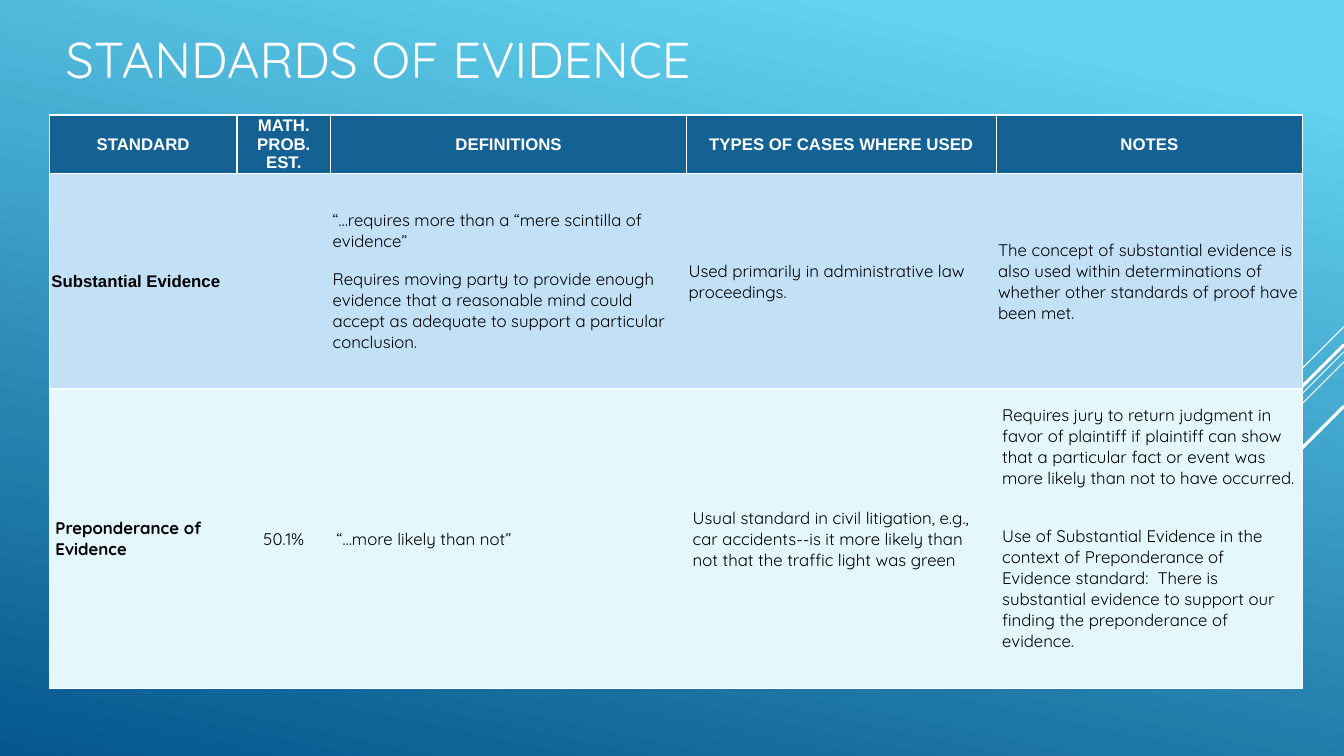
from dataclasses import dataclass

from lxml import etree
from pptx import Presentation
from pptx.dml.color import RGBColor
from pptx.enum.shapes import MSO_CONNECTOR
from pptx.enum.text import MSO_ANCHOR, MSO_AUTO_SIZE, PP_ALIGN
from pptx.oxml.ns import qn
from pptx.util import Inches, Pt

LEFT, CENTER = PP_ALIGN.LEFT, PP_ALIGN.CENTER
MIDDLE = MSO_ANCHOR.MIDDLE
STRAIGHT = MSO_CONNECTOR.STRAIGHT
NO_FIT = MSO_AUTO_SIZE.NONE
NO_STYLE = "{2D5ABB26-0587-4C30-8999-92F81FD0307C}"


@dataclass
class Theme:
    sans: str = "Arial"
    round: str = "Quicksand"
    white: str = "FFFFFF"
    black: str = "000000"
    sky: str = "62D2EF"
    deep: str = "05578D"
    head: str = "146194"
    bands: tuple = ("C2E1F6", "E3F7FC")
    big: int = 36
    body: int = 12
    rule: int = 1


THEME = Theme()
WIDTH, HEIGHT = 13.33, 7.5
TITLE = "STANDARDS OF EVIDENCE"
TITLE_BOX = (0.55, -0.22, 11, 1.59)
TABLE_LEFT, TABLE_TOP = 0.49, 1.14
COLS = (1.86, 0.93, 3.53, 3.07, 3.04)
ROWS = (0.58, 2.14, 2.97)
PADS = (0.06, 0.02, 0.06)
GAPS = (0, 12, 27)
TAIL = 0.21
RAYS = ((3.24, 1, 0.75), (3.49, 3.26, 0.75), (3.59, 2.07, 0.75),
        (3.42, 1.91, 2.25), (4.03, 1.39, 2.25))

HEADS = ("STANDARD", "MATH. PROB. EST.", "DEFINITIONS",
         "TYPES OF CASES WHERE USED", "NOTES")
SUBSTANTIAL = (
    "Substantial Evidence",
    "",
    ("“…requires more than a “mere scintilla of evidence”",
     "Requires moving party to provide enough evidence that a reasonable mind "
     "could accept as adequate to support a particular conclusion."),
    "Used primarily in administrative law proceedings.",
    "The concept of substantial evidence is also used within determinations "
    "of whether other standards of proof have been met.",
)
PREPONDERANCE = (
    "Preponderance of Evidence",
    "50.1%",
    "“…more likely than not”",
    "Usual standard in civil litigation, e.g., car accidents--is it more "
    "likely than not that the traffic light was green",
    ("Requires jury to return judgment in favor of plaintiff if plaintiff can "
     "show that a particular fact or event was more likely than not to have "
     "occurred.",
     "Use of Substantial Evidence in the context of Preponderance of Evidence "
     "standard:  There is substantial evidence to support our finding the "
     "preponderance of evidence."),
)
GRID = (HEADS, SUBSTANTIAL, PREPONDERANCE)


def rgb(code):
    return RGBColor.from_string(code)


def write(frame, text, font=THEME.round, size=THEME.body, color=THEME.black,
          bold=False, align=LEFT, gap=0):
    parts = (text,) if isinstance(text, str) else text
    for i, part in enumerate(parts):
        para = frame.add_paragraph() if i else frame.paragraphs[0]
        para.alignment = align
        para.space_before = Pt(gap if i else 0)
        run = para.add_run()
        run.text = part
        run.font.name = font
        run.font.size = Pt(size)
        run.font.bold = bold
        run.font.color.rgb = rgb(color)


def border(cell, sides):
    props = cell._tc.get_or_add_tcPr()
    for side in "LRTB":
        line = etree.SubElement(props, qn(f"a:ln{side}"))
        if side in sides:
            line.set("w", str(Pt(THEME.rule)))
            fill = etree.SubElement(line, qn("a:solidFill"))
            etree.SubElement(fill, qn("a:srgbClr")).set("val", THEME.white)
        else:
            etree.SubElement(line, qn("a:noFill"))


def paint(slide):
    fill = slide.background.fill
    fill.gradient()
    fill.gradient_angle = 360 - 102
    for stop, color, place in zip(fill.gradient_stops,
                                  (THEME.sky, THEME.deep), (0.1, 1)):
        stop.color.rgb = rgb(color)
        stop.position = place


def draw_rays(slide):
    for top, run, width in RAYS:
        ray = slide.shapes.add_connector(
            STRAIGHT, Inches(WIDTH), Inches(top),
            Inches(WIDTH - run), Inches(top + run))
        ray.line.color.rgb = rgb(THEME.white)
        ray.line.width = Pt(width)
        etree.SubElement(ray._element.spPr, qn("a:effectLst"))


def fill_cell(cell, text, row, col):
    head, last = row == 0, len(COLS) - 1
    sides = "TB" + ("L" if head or col == 0 else "")
    sides += "R" if head or col == last else ""
    border(cell, sides)
    cell.fill.solid()
    cell.fill.fore_color.rgb = rgb(THEME.head if head else THEME.bands[row - 1])
    cell.vertical_anchor = MIDDLE
    cell.margin_left = cell.margin_right = Inches(PADS[row])
    cell.margin_top = 0
    cell.margin_bottom = Inches(TAIL if row == 2 and col == last else 0)
    if text:
        write(cell.text_frame, text,
              font=THEME.sans if head or (row, col) == (1, 0) else THEME.round,
              color=THEME.white if head else THEME.black,
              bold=head or col == 0,
              align=CENTER if head or col == 1 else LEFT,
              gap=GAPS[row])


def draw_table(slide):
    table = slide.shapes.add_table(
        len(ROWS), len(COLS), Inches(TABLE_LEFT), Inches(TABLE_TOP),
        Inches(sum(COLS)), Inches(sum(ROWS))).table
    table._tbl.tblPr.find(qn("a:tableStyleId")).text = NO_STYLE
    table.horz_banding = False
    for col, width in enumerate(COLS):
        table.columns[col].width = Inches(width)
    for row, height in enumerate(ROWS):
        table.rows[row].height = Inches(height)
        for col, text in enumerate(GRID[row]):
            fill_cell(table.cell(row, col), text, row, col)


def draw_title(slide):
    title = slide.shapes.title
    title.left, title.top, title.width, title.height = map(Inches, TITLE_BOX)
    frame = title.text_frame
    frame.auto_size = NO_FIT
    frame.word_wrap = True
    frame.vertical_anchor = MIDDLE
    write(frame, TITLE, size=THEME.big, color=THEME.white)


def main():
    deck = Presentation()
    deck.slide_width, deck.slide_height = Inches(WIDTH), Inches(HEIGHT)
    slide = deck.slides.add_slide(deck.slide_layouts[5])
    paint(slide)
    draw_rays(slide)
    draw_table(slide)
    draw_title(slide)
    deck.save("out.pptx")


if __name__ == "__main__":
    main()
